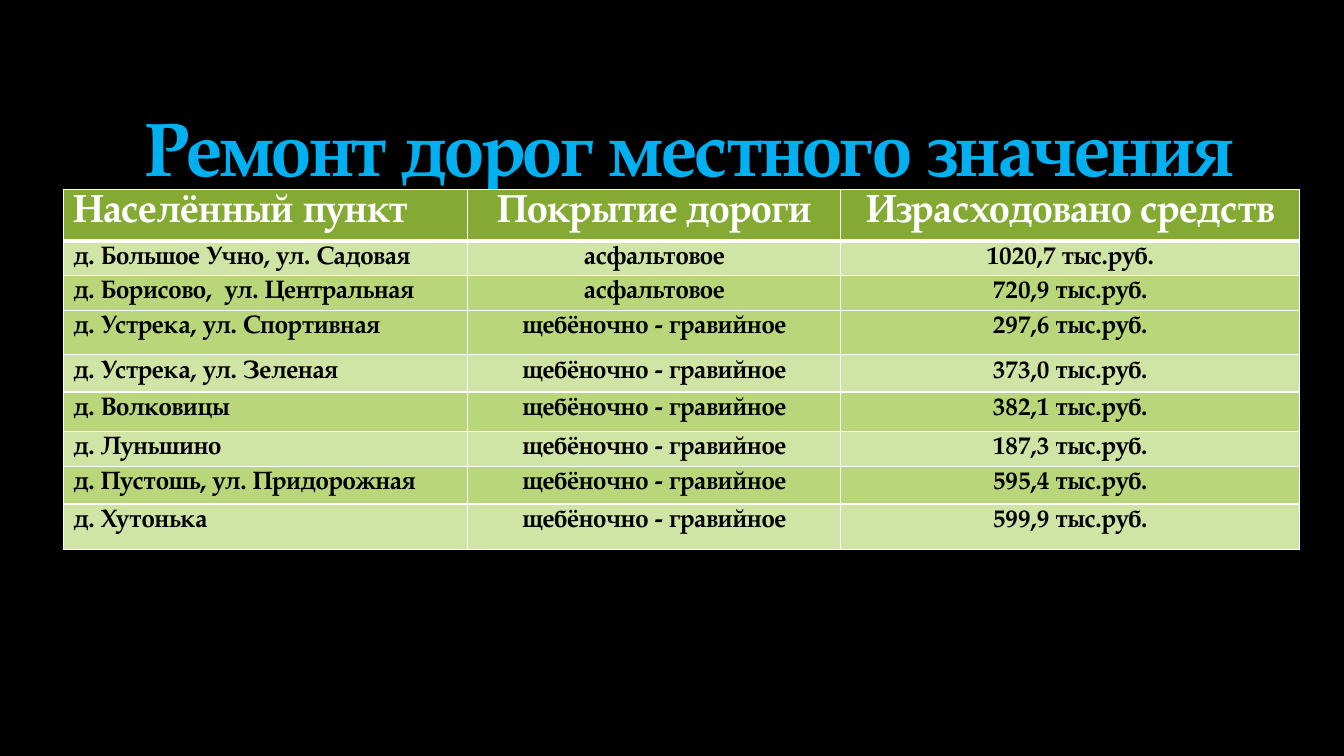
from dataclasses import dataclass
from typing import Any

from lxml import etree
from pptx import Presentation, util as u
from pptx.dml import color
from pptx.enum import text
from pptx.oxml import ns


@dataclass(frozen=True)
class Theme:
    font: str = "TeX Gyre Pagella"
    background: str = "000000"
    title: str = "00B0F0"
    title_outline: str = "462219"
    header_text: str = "FFFFFF"
    header_fill: str = "84AA33"
    body_text: str = "000000"
    light: str = "D0E4A6"
    dark: str = "B9D77A"
    border: str = "FFFFFF"
    title_size: int = 54
    header_size: int = 28
    body_size: int = 18


@dataclass(frozen=True)
class Area:
    column: int
    row: int
    columns: int
    rows: int


@dataclass(frozen=True)
class Repair:
    place: str
    surface: str
    cost: str
    rows: int
    fill: str


THEME = Theme()

# The slide is a fine grid of 1333 columns by 750 rows
GRID = u.Inches(0.01)
SLIDE = Area(0, 0, 1333, 750)
TITLE = Area(109, 40, 1150, 150)
TABLE = Area(63, 188, 1226, 351)
COLUMN_WIDTHS = (401, 370, 455)
HEADER_ROWS = 51

ASPHALT = "асфальтовое"
GRAVEL = "щебёночно - гравийное"
HEADERS = ("Населённый пункт", "Покрытие дороги", "Израсходовано средств")
REPAIRS = (
    Repair("д. Большое Учно, ул. Садовая", ASPHALT, "1020,7", 31, THEME.light),
    Repair("д. Борисово,  ул. Центральная", ASPHALT, "720,9", 32, THEME.dark),
    Repair("д. Устрека, ул. Спортивная", GRAVEL, "297,6", 44, THEME.dark),
    Repair("д. Устрека, ул. Зеленая", GRAVEL, "373,0", 37, THEME.light),
    Repair("д. Волковицы", GRAVEL, "382,1", 39, THEME.dark),
    Repair("д. Луньшино", GRAVEL, "187,3", 35, THEME.light),
    Repair("д. Пустошь, ул. Придорожная", GRAVEL, "595,4", 37, THEME.dark),
    Repair("д. Хутонька", GRAVEL, "599,9", 45, THEME.light),
)


def place(area: Area) -> tuple[int, ...]:
    return tuple(GRID * n for n in (area.column, area.row, area.columns, area.rows))


def format_paragraph(paragraph: Any, size: int, colour: str, centred: bool) -> None:
    paragraph.alignment = text.PP_ALIGN.CENTER if centred else text.PP_ALIGN.LEFT
    for run in paragraph.runs:
        run.font.name = THEME.font
        run.font.size = u.Pt(size)
        run.font.bold = True
        run.font.color.rgb = color.RGBColor.from_string(colour)


def make_line(tag: str, width: float, colour: str) -> Any:
    line = etree.Element(ns.qn(tag), w=str(u.Pt(width)))
    fill = etree.SubElement(line, ns.qn("a:solidFill"))
    etree.SubElement(fill, ns.qn("a:srgbClr"), val=colour)
    etree.SubElement(line, ns.qn("a:prstDash"), val="solid")
    return line


def add_title(slide: Any, words: str) -> None:
    title = slide.shapes.title
    title.left, title.top, title.width, title.height = place(TITLE)
    frame = title.text_frame
    frame.text = words
    frame.word_wrap = True
    frame.auto_size = text.MSO_AUTO_SIZE.NONE
    frame.vertical_anchor = text.MSO_ANCHOR.BOTTOM
    frame.margin_bottom = 0
    paragraph = frame.paragraphs[0]
    format_paragraph(paragraph, THEME.title_size, THEME.title, True)

    # Tight letters with a faint outline
    properties = paragraph.runs[0].font._element
    properties.set("spc", "-100")
    outline = make_line("a:ln", 0.25, THEME.title_outline)
    etree.SubElement(outline[0][0], ns.qn("a:alpha"), val="25000")
    properties.insert(0, outline)


def fill_row(table: Any, index: int, words: tuple[str, ...], rows: int, fill: str) -> None:
    header = index == 0
    size = THEME.header_size if header else THEME.body_size
    colour = THEME.header_text if header else THEME.body_text
    table.rows[index].height = GRID * rows
    for column, value in enumerate(words):
        cell = table.cell(index, column)
        cell.text_frame.text = value
        format_paragraph(cell.text_frame.paragraphs[0], size, colour, column > 0)
        cell.fill.solid()
        cell.fill.fore_color.rgb = color.RGBColor.from_string(fill)
        # Borders come before the fill; a thick rule runs under the header
        top, bottom = (3 if index == 1 else 1), (3 if header else 1)
        widths = {"a:lnL": 1, "a:lnR": 1, "a:lnT": top, "a:lnB": bottom}
        properties = cell._tc.get_or_add_tcPr()
        for position, (tag, width) in enumerate(widths.items()):
            properties.insert(position, make_line(tag, width, THEME.border))


def add_repairs_table(slide: Any) -> None:
    frame = slide.shapes.add_table(len(REPAIRS) + 1, len(HEADERS), *place(TABLE))
    table = frame.table
    for column, width in zip(table.columns, COLUMN_WIDTHS):
        column.width = GRID * width
    fill_row(table, 0, HEADERS, HEADER_ROWS, THEME.header_fill)
    for index, repair in enumerate(REPAIRS, start=1):
        words = (repair.place, repair.surface, f"{repair.cost} тыс.руб.")
        fill_row(table, index, words, repair.rows, repair.fill)


def main() -> None:
    presentation = Presentation()
    presentation.slide_width, presentation.slide_height = place(SLIDE)[2:]
    slide = presentation.slides.add_slide(presentation.slide_layouts[5])
    background = slide.background.fill
    background.solid()
    background.fore_color.rgb = color.RGBColor.from_string(THEME.background)
    add_title(slide, "Ремонт дорог местного значения")
    add_repairs_table(slide)
    presentation.save("out.pptx")


if __name__ == "__main__":
    main()
